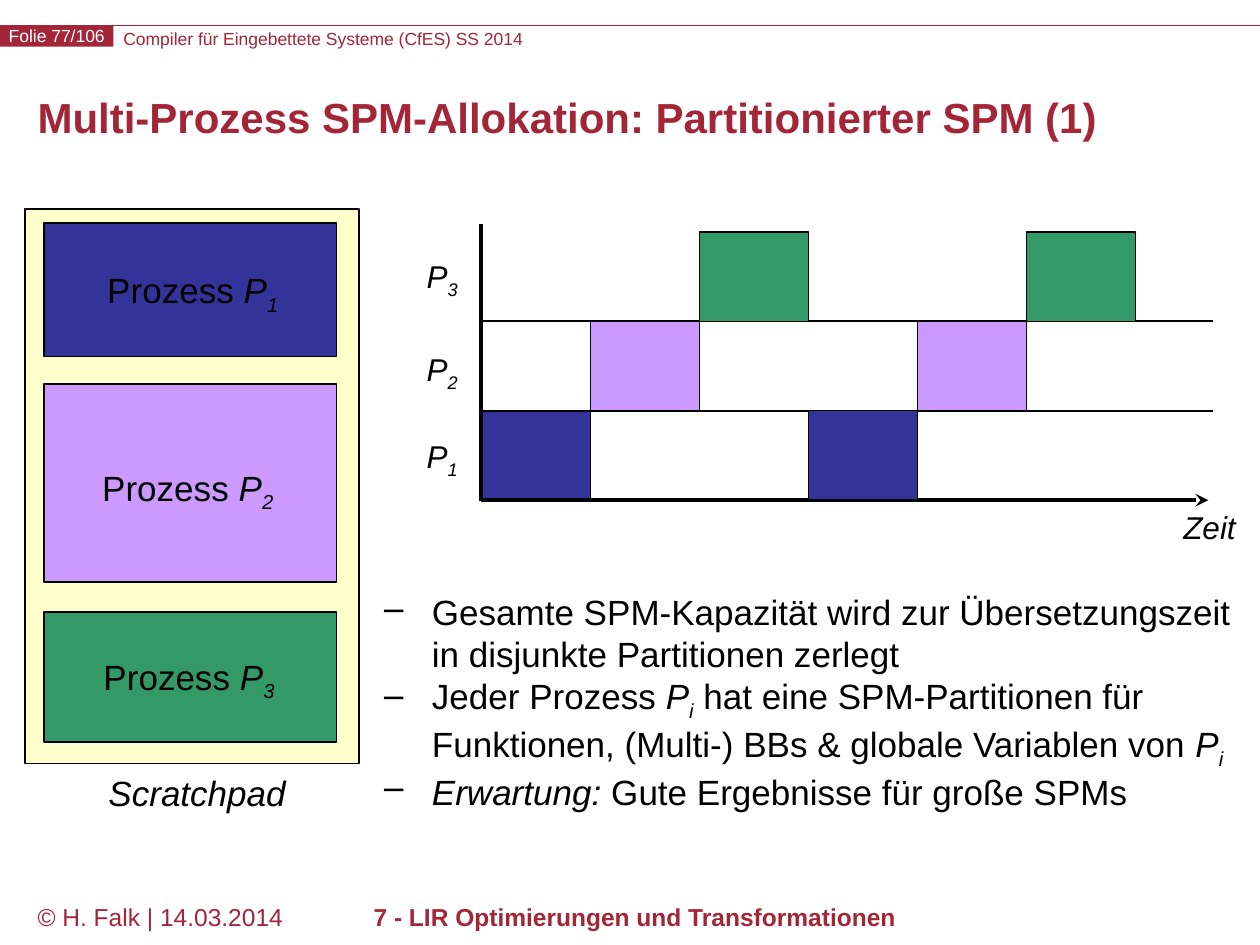
import pptx
import pptx.dml.color
import pptx.enum.shapes
import pptx.enum.text
import pptx.oxml
import pptx.oxml.ns
import pptx.util
from dataclasses import dataclass

Inches = pptx.util.Inches
ALIGN = pptx.enum.text.PP_ALIGN
ANCHOR = pptx.enum.text.MSO_ANCHOR


@dataclass(frozen=True)
class Theme:
    font: str = "Arial"
    accent: str = "A32638"
    text: str = "000000"
    white: str = "FFFFFF"
    memory: str = "FFFFCC"
    processes: tuple = ("333399", "CC99FF", "339966")
    tiny: int = 10
    footer: int = 14
    label: int = 18
    body: int = 20
    title: int = 24


def rgb(value):
    return pptx.dml.color.RGBColor.from_string(value)


def process_name(index):
    return [("P", "i"), (index, "is")]


class SlideBuilder:
    def __init__(self, slide, theme):
        self.slide = slide
        self.theme = theme

    def add_xml(self, parent, xml):
        ns = pptx.oxml.ns.nsdecls("a")
        parent.append(pptx.oxml.parse_xml(xml.replace("/>", f" {ns}/>", 1)))

    def set_text(self, sp, paragraphs, size, color=None, align=ALIGN.CENTER,
                 anchor=ANCHOR.TOP, inset=(0.1, 0.05), wrap=True, bullet=None, spacing=None):
        tf = sp.text_frame
        x, y = map(Inches, inset)
        frame_format = {"word_wrap": wrap, "vertical_anchor": anchor, "margin_left": x,
                        "margin_right": x, "margin_top": y, "margin_bottom": y}
        for name, value in frame_format.items():
            setattr(tf, name, value)
        for n, runs in enumerate(paragraphs):
            p = tf.add_paragraph() if n else tf.paragraphs[0]
            p.alignment = align
            if spacing:
                p.line_spacing = pptx.util.Pt(spacing)
            if bullet:
                pPr = p._p.get_or_add_pPr()
                pPr.set("marL", str(Inches(0.38)))
                pPr.set("indent", str(Inches(-0.38)))
                self.add_xml(pPr, f'<a:buChar char="{bullet}"/>')
            for text, style in runs:
                r = p.add_run()
                r.text = text
                font_format = {"name": self.theme.font, "size": pptx.util.Pt(size),
                               "bold": "b" in style, "italic": "i" in style}
                for name, value in font_format.items():
                    setattr(r.font, name, value)
                r.font.color.rgb = rgb(color or self.theme.text)
                if "s" in style:
                    r._r.get_or_add_rPr().set("baseline", "-25000")

    def text(self, box, paragraphs, size, **options):
        sp = self.slide.shapes.add_textbox(*map(Inches, box))
        self.set_text(sp, paragraphs, size, **options)

    def rect(self, box, fill, line=None):
        sp = self.slide.shapes.add_shape(
            pptx.enum.shapes.MSO_SHAPE.RECTANGLE, *map(Inches, box))
        sp.shadow.inherit = False
        sp.fill.solid()
        sp.fill.fore_color.rgb = rgb(fill)
        if line:
            sp.line.color.rgb = rgb(self.theme.text)
            sp.line.width = pptx.util.Pt(line)
        else:
            sp.line.fill.background()
        return sp

    def line(self, start, end, width, color=None, arrow=False):
        c = self.slide.shapes.add_connector(
            pptx.enum.shapes.MSO_CONNECTOR.STRAIGHT, *map(Inches, start + end))
        c.line.color.rgb = rgb(color or self.theme.text)
        c.line.width = pptx.util.Pt(width)
        if arrow:
            self.add_xml(c._element.spPr.get_or_add_ln(), '<a:tailEnd type="stealth"/>')
        self.add_xml(c._element.spPr, "<a:effectLst/>")


def add_frame(b):
    t = b.theme
    b.line((0, 0.2), (10, 0.2), 0.75, t.accent)
    b.text((0.98, 0.22, 6.6, 0.17), [[("Compiler für Eingebettete Systeme (CfES) SS 2014", "")]],
           t.tiny, color=t.accent, align=ALIGN.LEFT, inset=(0, 0))
    b.set_text(b.rect((0, 0.2, 0.9, 0.17), t.accent), [[("Folie 77/106", "")]], t.tiny,
               color=t.white, anchor=ANCHOR.MIDDLE, inset=(0, 0), wrap=False)
    b.text((0.2, 7.11, 2.2, 0.5), [[("© H. Falk | 14.03.2014", "")]],
           t.footer, color=t.accent, align=ALIGN.LEFT)
    b.text((2.01, 7.11, 6.06, 0.5), [[("7 - LIR Optimierungen und Transformationen", "b")]],
           t.footer, color=t.accent)
    b.text((0.2, 0.6, 9.61, 0.72),
           [[("Multi-Prozess SPM-Allokation: Partitionierter SPM (1)", "b")]], t.title,
           color=t.accent, align=ALIGN.LEFT, anchor=ANCHOR.MIDDLE, spacing=t.title)


def add_bullets(b):
    paragraphs = [
        [("Gesamte SPM-Kapazität wird zur Übersetzungszeit in disjunkte Partitionen zerlegt", "")],
        [("Jeder Prozess ", ""), *process_name("i"),
         (" hat eine SPM-Partitionen für Funktionen, (Multi-) BBs & globale Variablen von ", ""),
         *process_name("i")],
        [("Erwartung:", "i"), (" Gute Ergebnisse für große SPMs", "")],
    ]
    b.text((2.95, 4.64, 6.97, 1.78), paragraphs, b.theme.body, align=ALIGN.LEFT, bullet="–")


def add_scratchpad(b):
    t = b.theme
    b.rect((0.2, 1.66, 2.65, 4.4), t.memory, 1)
    partitions = [(1.77, 1.06, 0.62, 2.08), (3.05, 1.57, 0.58, 3.65), (4.86, 1.03, 0.59, 5.15)]
    for n, (top, height, label_x, label_y) in enumerate(partitions):
        fill = t.processes[n]
        b.rect((0.35, top, 2.32, height), fill, 1)
        b.set_text(b.rect((label_x, label_y, 1.82, 0.43), fill),
                   [[("Prozess ", ""), *process_name(str(n + 1))]], t.body)
    b.text((0.65, 6.07, 1.83, 0.43), [[("Scratchpad", "i")]], t.body)


def add_schedule(b):
    t = b.theme
    left, base, slot, row = 3.82, 3.97, 0.865, 0.71

    def add_slice(step):
        process = step % 3
        b.rect((left + step * slot, base - (process + 1) * row, slot, row),
               t.processes[process], 0.75)

    add_slice(0)
    b.line((left, 1.78), (left, 3.98), 2.5)
    b.line((left, base), (9.59, base), 2.5, arrow=True)
    for n in (1, 2):
        b.line((left, base - n * row), (9.63, base - n * row), 1)
    for n, top in enumerate((3.42, 2.73, 1.99), 1):
        b.text((3.19, top, 0.64, 0.4), [process_name(str(n))], t.label)
    for step in range(1, 6):
        add_slice(step)
    b.text((9.28, 3.98, 0.64, 0.4), [[("Zeit", "i")]], t.label, wrap=False)


def main():
    prs = pptx.Presentation()
    prs.slide_width, prs.slide_height = Inches(10), Inches(7.5)
    s = prs.slides.add_slide(prs.slide_layouts[6])
    b = SlideBuilder(s, Theme())
    for add_part in (add_frame, add_bullets, add_scratchpad, add_schedule):
        add_part(b)
    prs.save("out.pptx")


if __name__ == "__main__":
    main()
